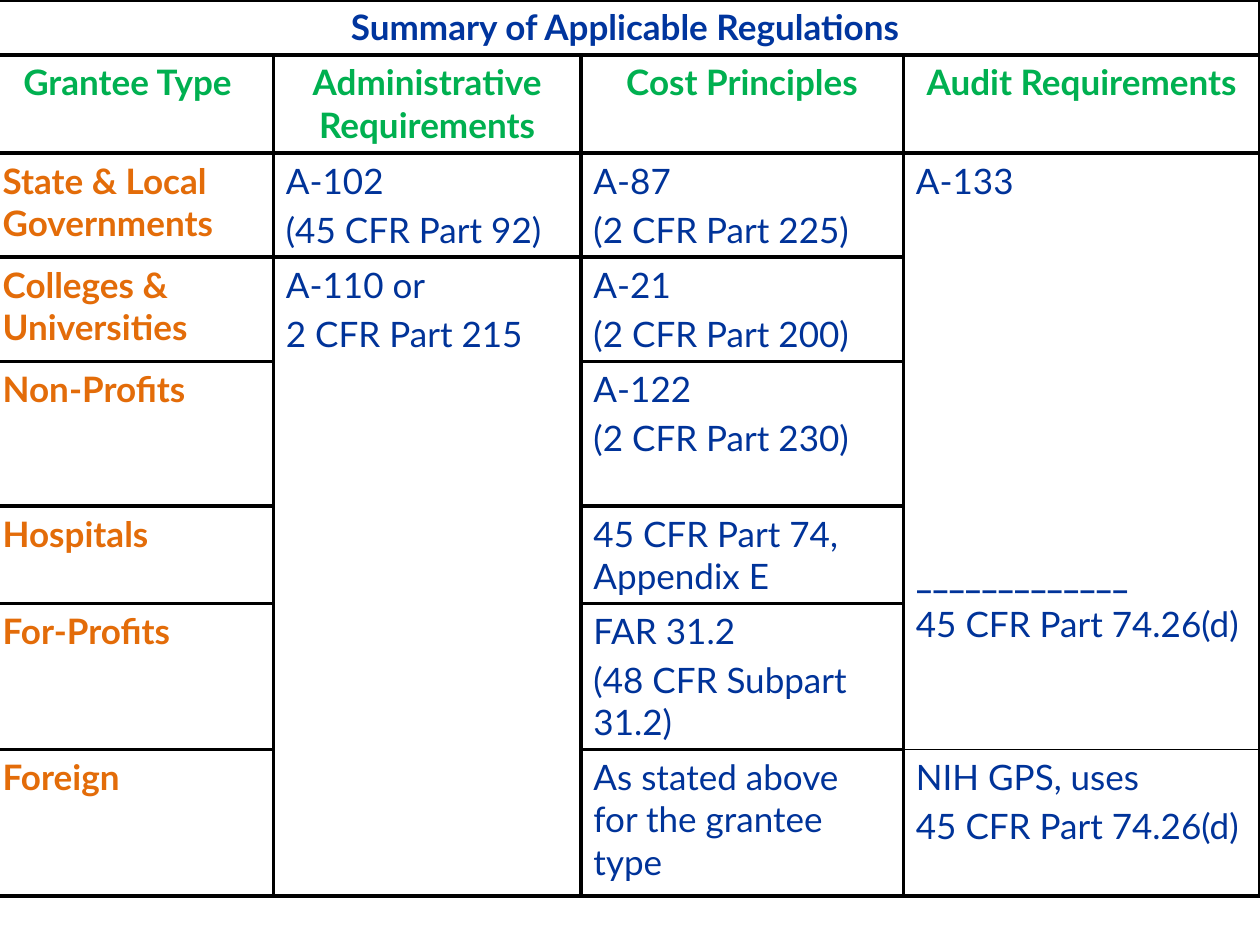
from lxml.etree import SubElement
from pptx import Presentation
from pptx.dml.color import RGBColor
from pptx.enum.text import PP_ALIGN
from pptx.oxml.ns import qn
from pptx.util import Cm, Pt

TITLE = "Summary of Applicable Regulations"
HEADERS = ["Grantee Type ", "Administrative Requirements", "Cost Principles", "Audit Requirements"]
GRANTEES = ["State & Local Governments", "Colleges & Universities", "Non-Profits",
            "Hospitals", "For-Profits", "Foreign"]
ADMIN = {2: ["A-102", "(45 CFR Part 92)"], 3: ["A-110 or", "2 CFR Part 215"]}
COSTS = [
    ["A-87", "(2 CFR Part 225)"],
    ["A-21", "(2 CFR Part 200)"],
    ["A-122", "(2 CFR Part 230)"],
    ["45 CFR Part 74, Appendix E"],
    ["FAR 31.2", "(48 CFR Subpart 31.2)"],
    ["As stated above for the grantee type"],
]
AUDITS = {2: ["A-133", "_____________", "45 CFR Part 74.26(d)"],
          7: ["NIH GPS, uses", "45 CFR Part 74.26(d)"]}
COL_WIDTHS = [5.71, 6.2, 6.5, 7.19]
ROW_HEIGHTS = [1.09, 1.98, 2.08, 2.1, 2.92, 1.96, 2.92, 2.95]
MERGES = [(0, 0, 0, 3), (2, 3, 6, 3), (3, 1, 7, 1)]
THIN_SIDES = {(2, 3): "B", (6, 3): "B", (7, 3): "T"}
NAVY, BLUE, GREEN, ORANGE, BLACK = "00359E", "003399", "00B050", "E36C09", "000000"


def color(value):
    return RGBColor.from_string(value)


def write(cell, lines, hue, bold=False, align=PP_ALIGN.LEFT):
    tf = cell.text_frame
    for i, line in enumerate(lines):
        p = tf.add_paragraph() if i else tf.paragraphs[0]
        p.text = line
        p.alignment = align
        p.space_before = Pt(4)
        p.font.name = "Lato"
        p.font.size = Pt(20)
        p.font.bold = bold
        p.font.color.rgb = color(hue)


def add_borders(cell, thin_side):
    tc_pr = cell._tc.get_or_add_tcPr()
    for side in "LRTB":
        width = Pt(1) if side == thin_side else Pt(2.25)
        ln = SubElement(tc_pr, qn(f"a:ln{side}"), w=str(int(width)))
        fill = SubElement(ln, qn("a:solidFill"))
        SubElement(fill, qn("a:srgbClr"), val=BLACK)


prs = Presentation()
prs.slide_width, prs.slide_height = Cm(25.4), Cm(19.05)
s = prs.slides.add_slide(prs.slide_layouts[6])
frame = s.shapes.add_table(len(ROW_HEIGHTS), len(COL_WIDTHS), Cm(-0.2), Cm(0),
                           Cm(sum(COL_WIDTHS)), Cm(sum(ROW_HEIGHTS)))
table = frame.table
table.first_row = table.horz_banding = False
for column, width in zip(table.columns, COL_WIDTHS):
    column.width = Cm(width)
for row, height in zip(table.rows, ROW_HEIGHTS):
    row.height = Cm(height)

for r in range(len(ROW_HEIGHTS)):
    for c in range(len(COL_WIDTHS)):
        cell = table.cell(r, c)
        add_borders(cell, THIN_SIDES.get((r, c)))
        cell.fill.background()
for top, left, bottom, right in MERGES:
    table.cell(top, left).merge(table.cell(bottom, right))

write(table.cell(0, 0), [TITLE], NAVY, True, PP_ALIGN.CENTER)
for c, header in enumerate(HEADERS):
    write(table.cell(1, c), [header], GREEN, True, PP_ALIGN.CENTER)
for r, (grantee, cost) in enumerate(zip(GRANTEES, COSTS), 2):
    write(table.cell(r, 0), [grantee], ORANGE, True)
    write(table.cell(r, 2), cost, BLUE)
for c, entries in ((1, ADMIN), (3, AUDITS)):
    for r, lines in entries.items():
        write(table.cell(r, c), lines, BLUE)

divider = table.cell(2, 3).text_frame.paragraphs[1]
divider.space_before = Pt(201)
divider.font.bold = True

prs.save("out.pptx")
